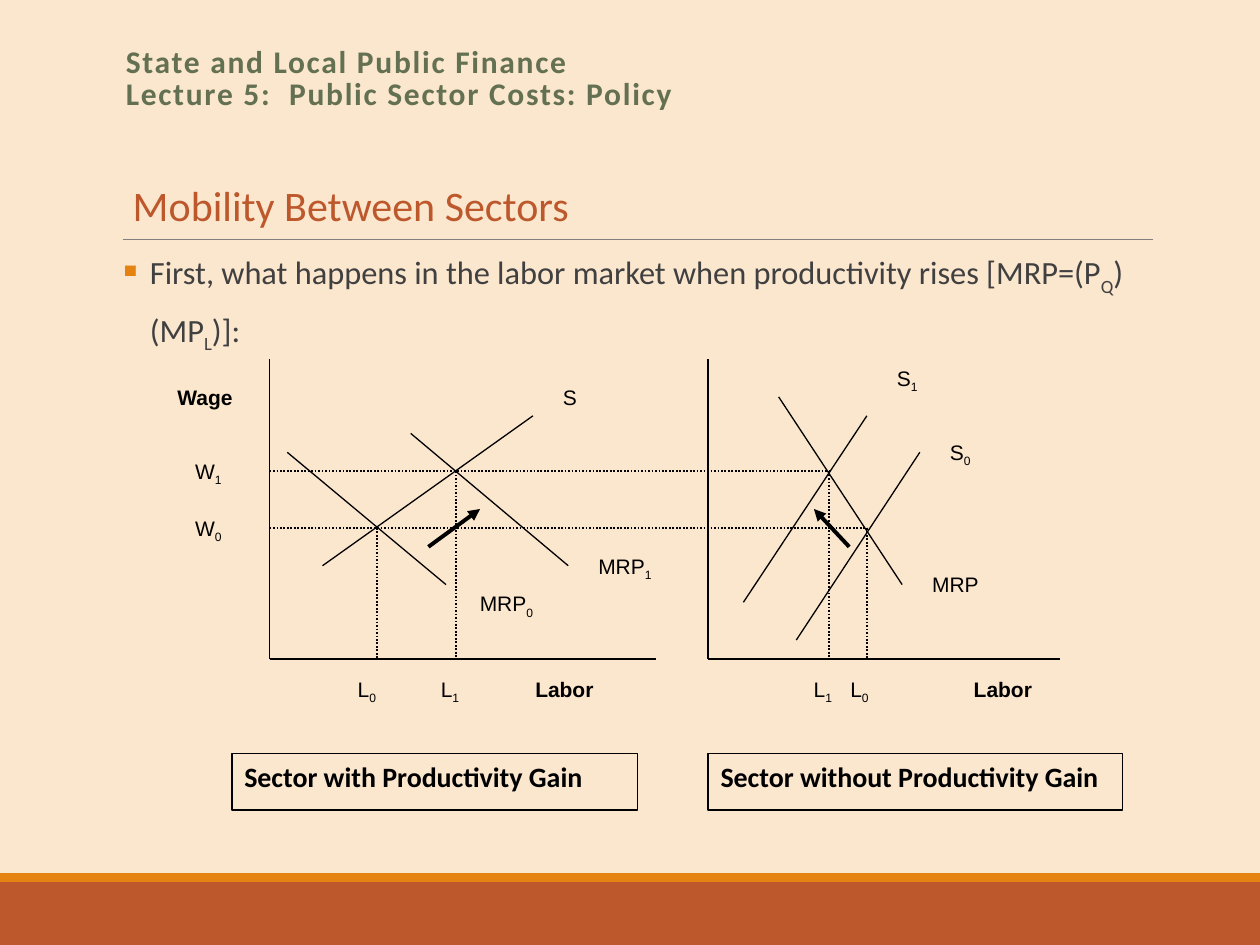
from lxml import etree
from pptx import Presentation
from pptx.dml.color import RGBColor
from pptx.enum.dml import MSO_LINE
from pptx.enum.shapes import MSO_CONNECTOR, MSO_SHAPE
from pptx.enum.text import MSO_ANCHOR, PP_ALIGN
from pptx.oxml.ns import qn
from pptx.util import Inches, Pt

RECTANGLE = MSO_SHAPE.RECTANGLE
STRAIGHT = MSO_CONNECTOR.STRAIGHT
DOTTED = MSO_LINE.ROUND_DOT
TOP = MSO_ANCHOR.TOP
LEFT, CENTER = PP_ALIGN.LEFT, PP_ALIGN.CENTER

CREAM, RUST, ORANGE = "FBE6CE", "BD582C", "E48312"
BLACK, GREY, DARK, GREEN = "000000", "808080", "404040", "637052"

COURSE = "State and Local Public Finance\vLecture 5:  Public Sector Costs: Policy"
HEADING = "Mobility Between Sectors"
POINT = ("First, what happens in the labor market when productivity rises "
         "[MRP=(P_Q_)(MP_L_)]:")

AXIS_TOP, AXIS_BASE = 2.85, 5.23
WAGE_0, WAGE_1 = 4.19, 3.74
LABEL_HEIGHT = 0.45
LABOR_TOP, CAPTION_TOP = 5.32, 5.98

SECTORS = [
    {
        "origin": 2.14, "axis_end": 5.21,
        "curves": [(2.56, 4.49, 4.23, 3.3), (2.28, 3.59, 3.54, 4.64),
                   (3.26, 3.44, 4.51, 4.49)],
        "shift": (3.4, 4.34, 3.81, 4.04),
        "drops": [(2.99, WAGE_0), (3.62, WAGE_1)],
        "labor": [("L_0", 2.74), ("L_1", 3.4), ("Labor", 4.15)],
        "caption": ("Sector with Productivity Gain", 1.84, 3.22),
    },
    {
        "origin": 5.62, "axis_end": 8.41,
        "curves": [(6.18, 3.15, 7.16, 4.64), (7.3, 3.59, 6.32, 5.08),
                   (6.88, 3.3, 5.9, 4.78)],
        "shift": (6.74, 4.34, 6.46, 4.04),
        "drops": [(6.58, WAGE_1), (6.88, WAGE_0)],
        "labor": [("L_1", 6.36), ("L_0", 6.65), ("Labor", 7.63)],
        "caption": ("Sector without Productivity Gain", 5.62, 3.29),
    },
]
WAGE_LINES = [(WAGE_0, 6.88), (WAGE_1, 6.6)]
LABELS = [("Wage", 1.31, 3), ("W_1", 1.45, 3.59), ("W_0", 1.45, 4.04),
          ("S", 4.37, 3), ("MRP_1", 4.65, 4.34), ("MRP_0", 3.71, 4.64),
          ("S_1", 7.02, 2.85), ("S_0", 7.44, 3.44), ("MRP", 7.3, 4.49)]
BOLD_LABELS = {"Wage", "Labor"}


def rgb(hex_color):
    return RGBColor.from_string(hex_color)


def write(shape, text, size, font, color, bold=False, wrap=True):
    frame = shape.text_frame
    frame.word_wrap = wrap
    frame.vertical_anchor = TOP
    paragraph = frame.paragraphs[0]
    paragraph.alignment = LEFT
    pieces = text.split("_")
    paragraph.text = pieces[0]
    for piece in pieces[1:]:
        paragraph.add_run().text = piece
    for run in paragraph.runs:
        run.font.size = Pt(size)
        run.font.name = font
        run.font.bold = bold
        run.font.color.rgb = rgb(color)
    if len(pieces) > 1:
        for subscript in paragraph.runs[1::2]:
            subscript.font._element.set("baseline", "-25000")
    return paragraph


def add_text(slide, box, *style, **options):
    shape = slide.shapes.add_textbox(*map(Inches, box))
    return shape, write(shape, *style, **options)


def add_box(slide, box, fill, outline=None):
    shape = slide.shapes.add_shape(RECTANGLE, *map(Inches, box))
    shape.shadow.inherit = False
    shape.fill.solid()
    shape.fill.fore_color.rgb = rgb(fill)
    if outline:
        shape.line.color.rgb = rgb(outline)
        shape.line.width = Pt(0.75)
    else:
        shape.line.fill.background()
    return shape


def add_line(slide, ends, color=BLACK, width=0.75, dash=None, arrow=False):
    connector = slide.shapes.add_connector(STRAIGHT, *map(Inches, ends))
    connector.line.color.rgb = rgb(color)
    connector.line.width = Pt(width)
    if dash:
        connector.line.dash_style = dash
    properties = connector._element.spPr
    if arrow:
        etree.SubElement(properties.find(qn("a:ln")), qn("a:tailEnd"), type="triangle")
    etree.SubElement(properties, qn("a:effectLst"))


def add_label(slide, text, left, top):
    add_text(slide, (left, top, 0.84, LABEL_HEIGHT), text, 12, "Arial", BLACK,
             bold=text in BOLD_LABELS, wrap=False)


def add_headings(slide):
    title = slide.shapes.title
    title.left, title.top, title.width, title.height = map(Inches, (0.89, 1.42, 3.79, 0.46))
    heading = write(title, HEADING, 24, "Calibri", RUST, wrap=False)
    heading.alignment = CENTER
    heading.line_spacing = 0.9

    course = add_text(slide, (0.9, 0.33, 8.25, 0.65), COURSE, 18, "Calibri", GREEN, bold=True)[1]
    course.line_spacing = 0.85
    for run in course.runs:
        run.font._element.set("spc", "100")


def add_point(slide):
    shape, point = add_text(slide, (0.94, 1.85, 8.25, 0.98), POINT, 18.5, "Calibri", DARK)
    shape.text_frame.margin_left = shape.text_frame.margin_right = 0
    point.line_spacing = 1.3
    point.space_before, point.space_after = Pt(6.8), Pt(1.1)
    properties = point._element.get_or_add_pPr()
    properties.set("marL", str(Inches(0.25)))
    properties.set("indent", str(-Inches(0.25)))
    bullet_color = etree.SubElement(properties, qn("a:buClr"))
    etree.SubElement(bullet_color, qn("a:srgbClr"), val=ORANGE)
    etree.SubElement(properties, qn("a:buChar"), char="▪")


def add_sector(slide, sector):
    origin = sector["origin"]
    add_line(slide, (origin, AXIS_TOP, origin, AXIS_BASE))
    add_line(slide, (origin, AXIS_BASE, sector["axis_end"], AXIS_BASE))
    for curve in sector["curves"]:
        add_line(slide, curve)
    for labor, wage in sector["drops"]:
        add_line(slide, (labor, wage, labor, AXIS_BASE), width=1, dash=DOTTED)
    add_line(slide, sector["shift"], width=2.25, arrow=True)
    for text, left in sector["labor"]:
        add_label(slide, text, left, LABOR_TOP)
    caption, left, width = sector["caption"]
    frame = add_box(slide, (left, CAPTION_TOP, width, LABEL_HEIGHT), CREAM, BLACK)
    write(frame, caption, 16, "Calibri", BLACK, bold=True)


def main():
    deck = Presentation()
    deck.slide_width, deck.slide_height = Inches(10), Inches(7.5)
    slide = deck.slides.add_slide(deck.slide_layouts[5])
    slide.background.fill.solid()
    slide.background.fill.fore_color.rgb = rgb(CREAM)

    add_box(slide, (0, 7, 10, 0.5), RUST)
    add_box(slide, (0, 6.93, 10, 0.07), ORANGE)
    add_line(slide, (0.98, 1.9, 9.15, 1.9), GREY, 0.5)
    add_headings(slide)
    add_point(slide)
    for wage, end in WAGE_LINES:
        add_line(slide, (SECTORS[0]["origin"], wage, end, wage), width=1, dash=DOTTED)
    for sector in SECTORS:
        add_sector(slide, sector)
    for label in LABELS:
        add_label(slide, *label)
    deck.save("out.pptx")


if __name__ == "__main__":
    main()
